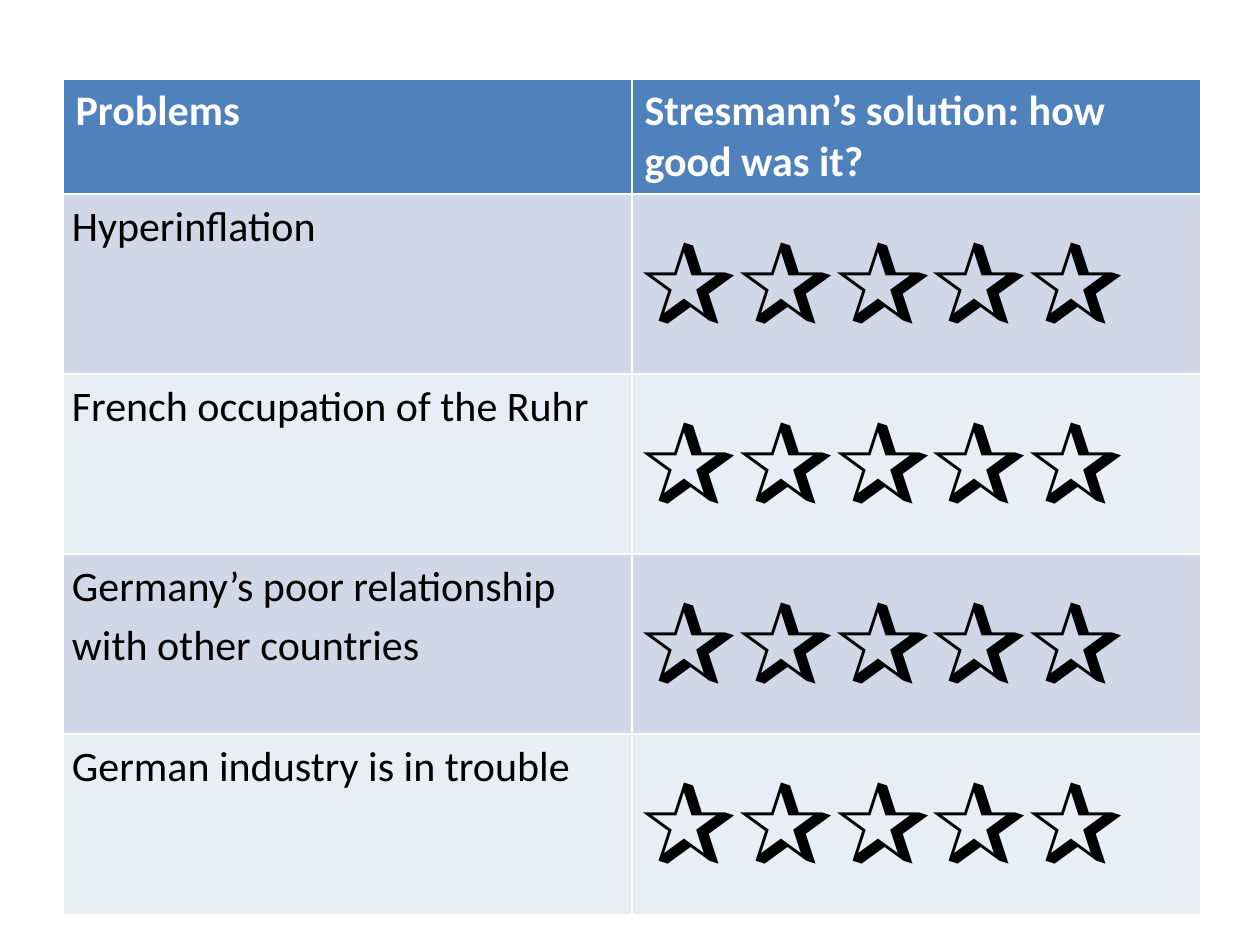
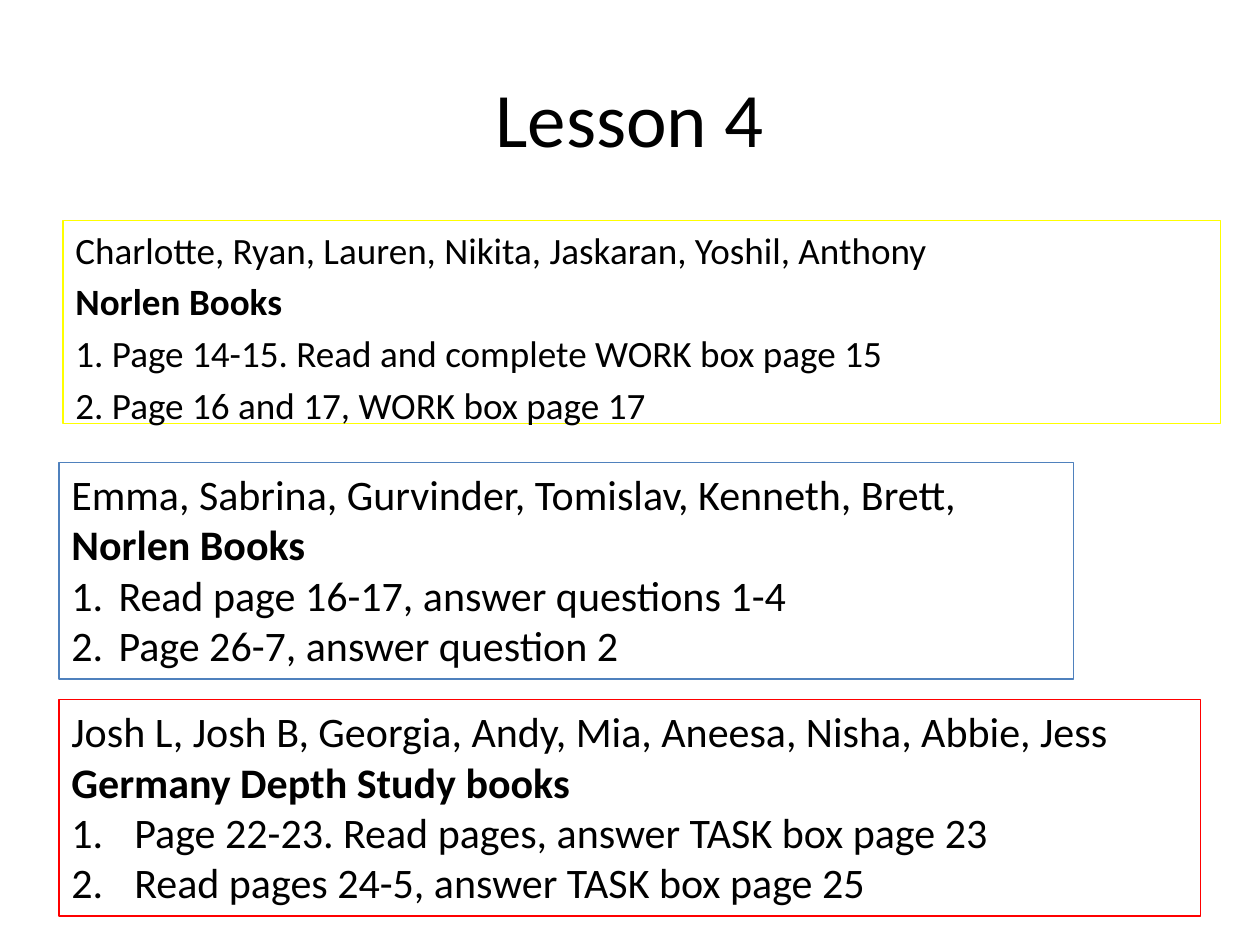
from dataclasses import dataclass
from lxml.etree import SubElement
from pptx import Presentation
from pptx.dml.color import RGBColor as RGB
from pptx.enum.shapes import MSO_SHAPE as Shape
from pptx.enum.text import MSO_ANCHOR as Anchor, PP_ALIGN as Align
from pptx.oxml.ns import qn
from pptx.util import Cm, Pt


@dataclass(frozen=True)
class Theme:
    font: str = "Calibri"
    ink: RGB = RGB(0, 0, 0)
    white: RGB = RGB(255, 255, 255)
    blue: RGB = RGB(0x4F, 0x81, 0xBD)
    yellow: RGB = RGB(255, 255, 0)
    red: RGB = RGB(255, 0, 0)
    bands: tuple = (RGB(0xD0, 0xD8, 0xE8), RGB(0xE9, 0xED, 0xF4))
    title: float = 44
    stars: float = 66
    body: float = 24
    compact: float = 21.2


theme = Theme()


def style(paragraph, size, color=theme.ink, bold=False):
    font = paragraph.font
    font.name, font.size, font.bold = theme.font, Pt(size), bold
    font.color.rgb = color


def hang(paragraph, indent, numbered):
    properties = paragraph._p.get_or_add_pPr()
    properties.set("marL", str(Cm(indent)))
    properties.set("indent", str(-Cm(indent)))
    if numbered:
        SubElement(properties, qn("a:buFont"), typeface="+mj-lt")
        SubElement(properties, qn("a:buAutoNum"), type="arabicPeriod")


deck = Presentation()
deck.slide_width, deck.slide_height = Cm(25.4), Cm(19.05)
blank = deck.slide_layouts[6]

ratings = deck.slides.add_slide(blank)
headings = ("Problems", "Stresmann’s solution: how good was it?")
problems = (
    "Hyperinflation",
    "French occupation of the Ruhr",
    "Germany’s poor relationship with other countries",
    "German industry is in trouble",
)
rating_table = ratings.shapes.add_table(
    len(problems) + 1, 2, Cm(1.27), Cm(1.59), Cm(22.94), Cm(16.83)
).table
for column in rating_table.columns:
    column.width = Cm(11.47)
for row in rating_table.rows:
    row.height = Cm(3.63)
rating_table.rows[0].height = Cm(2.31)

for column, heading in enumerate(headings):
    cell = rating_table.cell(0, column)
    cell.text = heading
    cell.fill.solid()
    cell.fill.fore_color.rgb = theme.blue
    style(cell.text_frame.paragraphs[0], theme.body, theme.white, True)

for number, problem in enumerate(problems):
    for column, (words, size) in enumerate(((problem, theme.body), ("✰" * 5, theme.stars))):
        cell = rating_table.cell(number + 1, column)
        cell.text = words
        cell.fill.solid()
        cell.fill.fore_color.rgb = theme.bands[number % 2]
        cell.margin_left = cell.margin_right = Cm(0.18)
        cell.margin_top = cell.margin_bottom = 0
        entry = cell.text_frame.paragraphs[0]
        entry.line_spacing = 1.15
        style(entry, size)

lesson = deck.slides.add_slide(blank)
title = lesson.shapes.add_textbox(Cm(1.27), Cm(0.76), Cm(22.86), Cm(3.18)).text_frame
title.word_wrap = True
title.vertical_anchor = Anchor.MIDDLE
title.text = "Lesson 4"
title.paragraphs[0].alignment = Align.CENTER
style(title.paragraphs[0], theme.title)

groups = (
    ((1.27, 4.45, 23.34, 4.09), theme.yellow, theme.compact, 0.95, False, (
        "Charlotte, Ryan, Lauren, Nikita, Jaskaran, Yoshil, Anthony",
        "Norlen Books",
        "1. Page 14-15. Read and complete WORK box page 15",
        "2. Page 16 and 17, WORK box page 17",
    )),
    ((1.19, 9.32, 20.45, 4.37), theme.blue, theme.body, 0.95, True, (
        "Emma, Sabrina, Gurvinder, Tomislav, Kenneth, Brett,",
        "Norlen Books",
        "Read page 16-17, answer questions 1-4",
        "Page 26-7, answer question 2",
    )),
    ((1.19, 14.1, 23.01, 4.37), theme.red, theme.body, 1.27, True, (
        "Josh L, Josh B, Georgia, Andy, Mia, Aneesa, Nisha, Abbie, Jess",
        "Germany Depth Study books",
        "Page 22-23. Read pages, answer TASK box page 23",
        "Read pages 24-5, answer TASK box page 25",
    )),
)
for bounds, outline, size, indent, numbered, lines in groups:
    box = lesson.shapes.add_shape(Shape.RECTANGLE, *map(Cm, bounds))
    box.shadow.inherit = False
    box.fill.background()
    box.line.color.rgb = outline
    box.line.width = Pt(0.75)
    tasks = box.text_frame
    tasks.word_wrap = True
    tasks.vertical_anchor = Anchor.TOP
    tasks.text = "\n".join(lines)
    for position, paragraph in enumerate(tasks.paragraphs):
        paragraph.alignment = Align.LEFT
        if not numbered:
            paragraph.space_before = Pt(size * 0.2)
        if position > 1 or not numbered:
            hang(paragraph, indent, numbered)
        style(paragraph, size, bold=position == 1)

deck.save("out.pptx")
